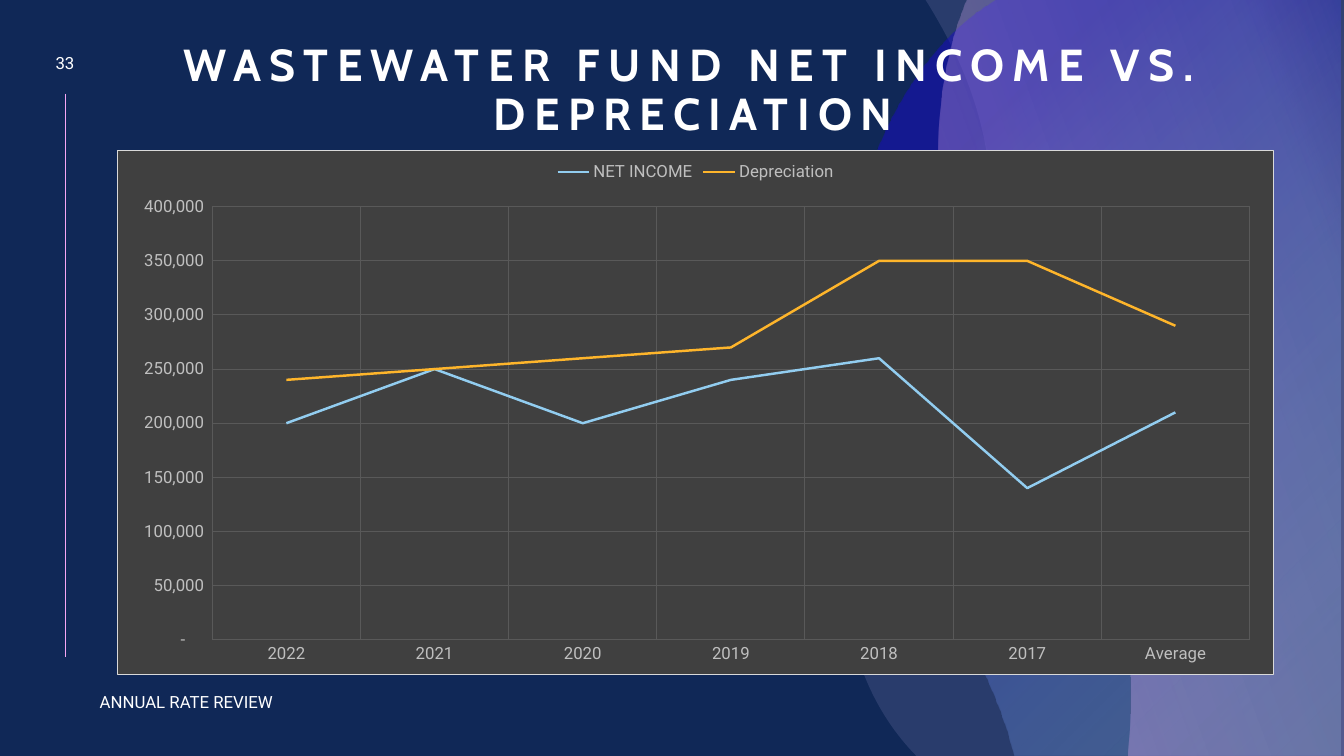
from lxml import etree
from pptx import Presentation
from pptx import util as u
from pptx.chart.data import CategoryChartData
from pptx.dml.color import RGBColor
from pptx.enum import chart as ch, shapes, text
from pptx.oxml import parse_xml
from pptx.oxml.ns import nsdecls, qn

NAVY, WHITE, PINK, LILAC = "102857", "FFFFFF", "F6A6F4", "C3B9F2"
SKY, BLUE, AMBER = "92CDF0", "180DC2", "FEB52B"
PANEL, GRID, LABEL, BORDER = "404040", "595959", "BFBFBF", "D9D9D9"

YEARS = ["2022", "2021", "2020", "2019", "2018", "2017", "Average"]
SERIES = [
    ("NET INCOME", SKY, [200000, 250000, 200000, 240000, 260000, 140000, 210000]),
    ("Depreciation", AMBER, [240000, 250000, 260000, 270000, 350000, 350000, 290000]),
]

# Each outline runs straight around the slide's corners, then back up along
# cubic curves, each given by two controls and an end.
PALE_EDGE = ([(9.18, 0), (13.34, 0), (13.34, 7.5), (9.09, 7.5), (9.08, 7.49)],
             [(8.7, 7.1), (8.38, 6.48), (8.39, 5.68),
              (8.4, 4.27), (9.8, 3.66), (9.83, 2.15),
              (9.85, 1.21), (9.5, 0.52), (9.2, 0.03)])
BLUE_WAVE = ([(9.88, 0), (13.3, 0), (13.3, 7.5), (10.06, 7.5), (10.01, 7.31)],
             [(9.56, 5.83), (8.4, 4.92), (8.39, 3.22),
              (8.38, 1.65), (9.09, 0.55), (9.73, 0.1)])
PINK_WAVE = ([(9.59, 0), (13.34, 0), (13.34, 7.5), (11.18, 7.5), (11.2, 7.21)],
             [(11.21, 7.08), (11.21, 6.94), (11.21, 6.81),
              (11.17, 4.58), (9.32, 3.68), (9.31, 1.59),
              (9.3, 1.06), (9.38, 0.59), (9.52, 0.18)])


def rgb(color):
    return RGBColor.from_string(color)


def style_font(font, size, color, name="Roboto", bold=False):
    font.size, font.name, font.bold = u.Pt(size), name, bold
    font.color.rgb = rgb(color)


def style_line(line, color, width):
    line.color.rgb = rgb(color)
    line.width = u.Pt(width)


def color_xml(color, opacity):
    return f'<a:srgbClr val="{color}"><a:alpha val="{opacity * 1000}"/></a:srgbClr>'


def solid_xml(color, opacity=100):
    return f'<a:solidFill {nsdecls("a")}>{color_xml(color, opacity)}</a:solidFill>'


def gradient_xml(stops, direction):
    marks = "".join(f'<a:gs pos="{place * 1000}">{color_xml(color, opacity)}</a:gs>'
                    for place, color, opacity in stops)
    return (f'<a:gradFill {nsdecls("a")} rotWithShape="1"><a:gsLst>{marks}</a:gsLst>'
            f'{direction}</a:gradFill>')


def bend_segments(properties, count):
    """Turn the last `count` straight segments into cubic curves, by threes."""
    segments = list(properties.iter(qn("a:lnTo")))[-count:]
    for first in range(0, count, 3):
        curve = etree.Element(qn("a:cubicBezTo"))
        segments[first].addprevious(curve)
        for segment in segments[first:first + 3]:
            curve.append(segment[0])
            segment.getparent().remove(segment)


def add_wave(page, outline, fill_xml):
    corners, curves = outline
    spots = [(u.Inches(x), u.Inches(y)) for x, y in corners + curves]
    builder = page.shapes.build_freeform(*spots[0])
    builder.add_line_segments(spots[1:], close=False)
    wave = builder.convert_to_shape()
    properties = wave.element.spPr
    bend_segments(properties, len(curves))
    etree.SubElement(next(properties.iter(qn("a:path"))), qn("a:close"))
    wave.shadow.inherit = False
    wave.fill.background()
    properties.replace(properties.find(qn("a:noFill")), parse_xml(fill_xml))
    wave.line.fill.background()


def add_backdrop(page):
    page.background.fill.solid()
    page.background.fill.fore_color.rgb = rgb(NAVY)

    # Vertical rule at the left
    x = u.Inches(0.65)
    rule = page.shapes.add_connector(
        shapes.MSO_CONNECTOR.STRAIGHT, x, u.Inches(0.93), x, u.Inches(6.52))
    style_line(rule.line, PINK, 0.5)
    etree.SubElement(rule.element.spPr, qn("a:effectLst"))

    # Translucent waves at the right
    add_wave(page, PALE_EDGE, solid_xml(LILAC, 14))
    add_wave(page, BLUE_WAVE, gradient_xml(
        [(4, SKY, 24), (79, BLUE, 52)],
        '<a:path path="circle"><a:fillToRect l="100000" t="100000"/></a:path>'))
    add_wave(page, PINK_WAVE, gradient_xml(
        [(1, PINK, 38), (84, LILAC, 20), (100, PINK, 3)],
        f'<a:lin ang="{340 * 60000}" scaled="0"/>'))


def add_label(page, box, words, align):
    label = page.shapes.add_textbox(*map(u.Inches, box))
    frame = label.text_frame
    frame.word_wrap = True
    frame.vertical_anchor = text.MSO_ANCHOR.MIDDLE
    para = frame.paragraphs[0]
    para.text, para.alignment, para.space_after = words, align, u.Pt(6)
    style_font(para.font, 12, WHITE)


def place_title(page, box, words):
    title = page.shapes.title
    title.left, title.top, title.width, title.height = map(u.Inches, box)
    frame = title.text_frame
    frame.word_wrap = True
    frame.auto_size = text.MSO_AUTO_SIZE.NONE
    frame.vertical_anchor = text.MSO_ANCHOR.BOTTOM
    para = frame.paragraphs[0]
    para.text, para.alignment, para.line_spacing = words, text.PP_ALIGN.CENTER, 0.9
    style_font(para.font, 32, WHITE, "Cabin", True)
    # Letter spacing of 6 points
    for span in title.element.iter(qn("a:r")):
        span.get_or_add_rPr().set("spc", "600")
    # Bring the title in front of the waves
    title.element.getparent().append(title.element)


def add_income_chart(page, box):
    data = CategoryChartData(number_format="#,##0")
    data.categories = YEARS
    for name, _, values in SERIES:
        data.add_series(name, values)
    chart = page.shapes.add_chart(
        ch.XL_CHART_TYPE.LINE, *map(u.Inches, box), data).chart
    chart.has_title = False
    style_font(chart.font, 10, "000000")

    # Legend and lines
    chart.has_legend = True
    chart.legend.position = ch.XL_LEGEND_POSITION.TOP
    chart.legend.include_in_layout = False
    style_font(chart.legend.font, 12, LABEL)
    chart.plots[0].vary_by_categories = False
    for series, (_, color, _) in zip(chart.plots[0].series, SERIES):
        series.smooth = False
        series.marker.style = ch.XL_MARKER_STYLE.NONE
        style_line(series.format.line, color, 1.75)

    # Axes
    for axis in (chart.category_axis, chart.value_axis):
        axis.major_tick_mark = axis.minor_tick_mark = ch.XL_TICK_MARK.NONE
        axis.has_major_gridlines = True
        style_line(axis.major_gridlines.format.line, GRID, 0.75)
        axis.format.line.fill.background()
        style_font(axis.tick_labels.font, 12, LABEL)
    scale = chart.value_axis
    scale.minimum_scale, scale.maximum_scale, scale.major_unit = 0, 400000, 50000
    scale.tick_labels.number_format = '_(* #,##0_);_(* \\(#,##0\\);_(* "-"??_);_(@_)'
    scale.tick_labels.number_format_is_linked = False

    # Plot area position, as shares of the chart
    spots = "".join(f'<c:{key} val="{value}"/>' for key, value in [
        ("layoutTarget", "inner"), ("xMode", "edge"), ("yMode", "edge"),
        ("x", 0.082), ("y", 0.107), ("w", 0.897), ("h", 0.826)])
    plot_area = chart.element.chart.plotArea
    for layout in plot_area.findall(qn("c:layout")):
        plot_area.remove(layout)
    plot_area.insert(0, parse_xml(
        f'<c:layout {nsdecls("c")}><c:manualLayout>{spots}</c:manualLayout></c:layout>'))

    # Panel fill and border
    chart.element.chart.addnext(parse_xml(
        f'<c:spPr {nsdecls("c", "a")}>{solid_xml(PANEL)}'
        f'<a:ln w="{u.Pt(0.75)}">{solid_xml(BORDER)}</a:ln></c:spPr>'))


def build_chart_slide(deck):
    page = deck.slides.add_slide(deck.slide_layouts[5])
    add_backdrop(page)
    add_label(page, (0.36, 0.45, 0.57, 0.34), "33", text.PP_ALIGN.CENTER)
    add_label(page, (0.89, 6.81, 2.55, 0.3), "ANNUAL RATE REVIEW", text.PP_ALIGN.LEFT)
    place_title(page, (0.65, 0.27, 12.45, 1.17),
                "WASTEWATER FUND NET INCOME VS. DEPRECIATION")
    add_income_chart(page, (1.16, 1.49, 11.48, 5.21))


def main():
    deck = Presentation()
    deck.slide_width, deck.slide_height = u.Inches(13.33), u.Inches(7.5)
    build_chart_slide(deck)
    deck.save("out.pptx")


if __name__ == "__main__":
    main()
